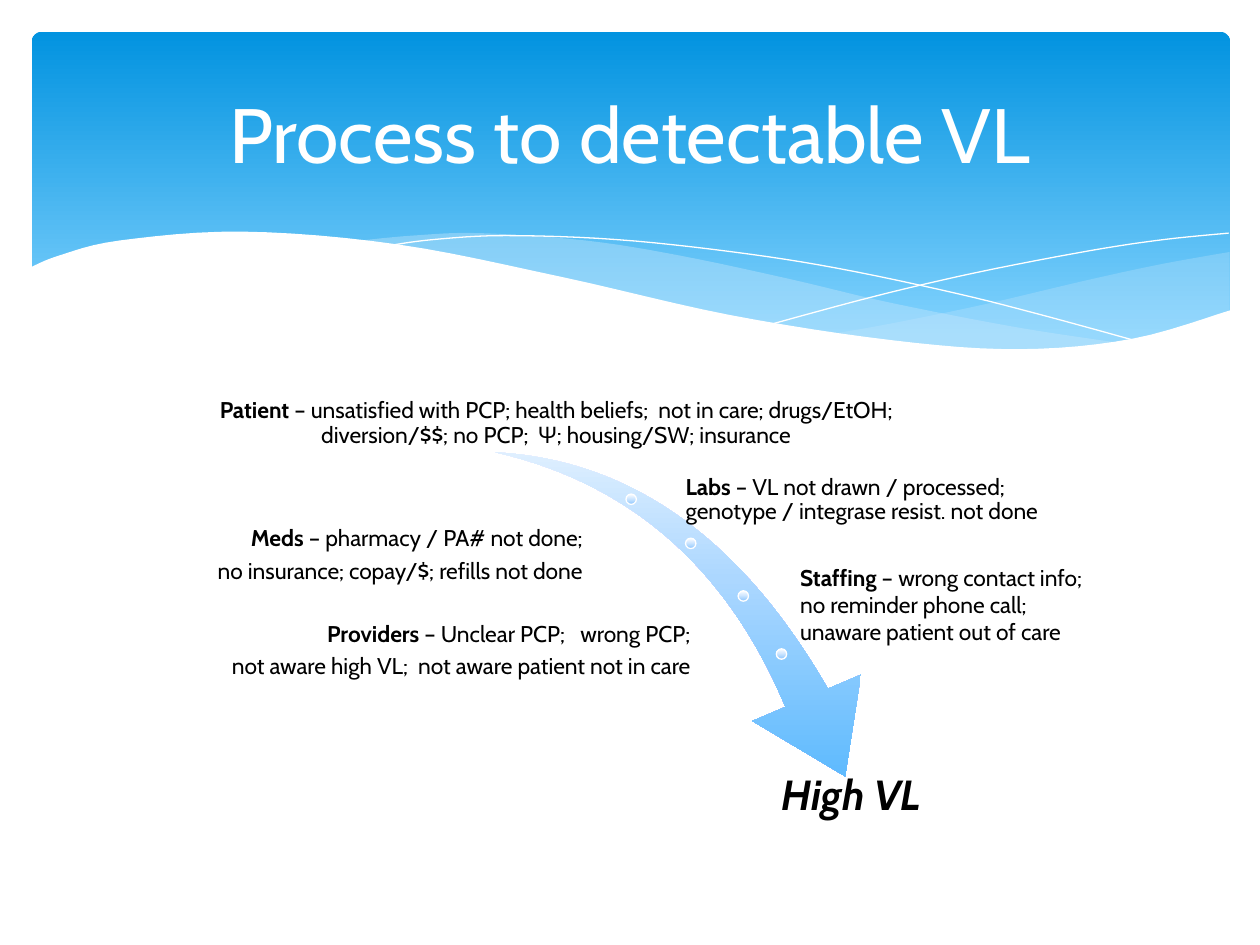
from dataclasses import dataclass
from itertools import chain
from typing import Any, Optional

from lxml.etree import SubElement
from pptx import Presentation
from pptx.dml.color import RGBColor
from pptx.enum.shapes import MSO_SHAPE as Preset
from pptx.enum.text import MSO_ANCHOR as Anchor, MSO_AUTO_SIZE as AutoSize, PP_ALIGN as Align
from pptx.oxml.ns import qn
from pptx.util import Cm, Pt

WHITE = RGBColor(0xFF, 0xFF, 0xFF)
BLACK = RGBColor(0x00, 0x00, 0x00)
MIST = RGBColor(0xC6, 0xE7, 0xFC)
DEEP_BLUE = RGBColor(0x02, 0x93, 0xE0)
SKY = RGBColor(0x83, 0xD3, 0xFE)
ARROW_MID = RGBColor(0xAC, 0xD7, 0xFF)
ARROW_END = RGBColor(0x42, 0xB0, 0xFD)
DOT_MID = RGBColor(0xD2, 0xE8, 0xFF)
DOT_END = RGBColor(0x8D, 0xC6, 0xFD)

BANNER_STOPS = ((0, DEEP_BLUE), (90, SKY))
ARROW_STOPS = ((0, WHITE), (44, ARROW_MID), (100, ARROW_END))
DOT_STOPS = ((0, WHITE), (44, DOT_MID), (100, DOT_END))

Point = tuple[float, float]
Curve = tuple[Point, ...]


@dataclass(frozen=True)
class Wave:
    """A filled area whose outline runs along the given curves, in cm."""
    edges: tuple[Curve, ...]
    color: RGBColor
    opacity: int = 100


@dataclass(frozen=True)
class Line:
    text: str
    lead: str = ""
    right_indent: float = 0


@dataclass(frozen=True)
class Label:
    box: tuple[float, float, float, float]
    lines: tuple[Line, ...]
    align: Align = Align.LEFT
    anchor: Anchor = Anchor.MIDDLE
    size: int = 13
    color: RGBColor = BLACK
    italic: bool = False
    inset: tuple[float, float] = (0.05, 0.05)
    spacing: float = 0.9
    after: float = 4.6
    auto_size: AutoSize = AutoSize.NONE


WAVES = (
    Wave((((24.79, 5.08), (23.39, 5.33), (21.87, 5.66), (19.79, 6.15), (17.93, 6.53), (16.79, 6.73)),
          ((16.79, 6.73), (18.26, 6.91), (19.84, 7.04), (21.21, 7.04), (22.58, 6.91),
           (23.75, 6.65), (24.79, 6.27))), MIST, 29),
    Wave((((22.68, 6.93), (20.5, 6.6), (17.93, 6.1), (15.98, 5.64), (13.74, 5.16),
           (11.81, 4.85), (9.65, 4.7), (8.33, 4.75), (7.26, 4.85)),
          ((7.26, 4.85), (9.19, 5.16), (11.4, 5.64), (14.38, 6.3), (16.89, 6.76),
           (19, 7.01), (21.03, 7.06), (22.68, 6.93))), MIST, 40),
)
STRANDS: tuple[Curve, ...] = (
    ((7.85, 4.95), (8.74, 4.83), (10.19, 4.75), (12.42, 4.83), (14.78, 5.08),
     (16.89, 5.41), (19.3, 5.92), (21.11, 6.38), (23.04, 6.91)),
    ((15.57, 6.53), (17.65, 5.97), (19.71, 5.49), (22, 5.05), (23.47, 4.83), (24.77, 4.7)),
)
FRONT_WAVE = Wave(
    (((24.82, 6.25), (22.83, 6.83), (20.55, 7.04), (17.98, 6.86), (14.71, 6.35), (11.35, 5.59),
      (8.03, 4.93), (4.9, 4.67), (2.41, 4.85), (1.17, 5.16), (0.58, 5.41)),
     ((0.58, 8.36), (24.82, 8.36))), WHITE)

DOT_SIZE = 0.21
DOTS: Curve = ((12.62, 9.96), (13.82, 10.85), (14.88, 11.91), (15.65, 13.08))

LABELS = (
    Label((3.89, 7.39, 14.63, 1.7),
          (Line(" – unsatisfied with PCP; health beliefs;  not in care; drugs/EtOH; "
                "diversion/$$; no PCP;  Ψ; housing/SW; insurance", "Patient"),),
          Align.CENTER, Anchor.BOTTOM),
    Label((13.77, 9.32, 9.25, 1.52),
          (Line(" – VL not drawn / processed;\vgenotype / integrase resist. not done", "Labs"),)),
    Label((2.54, 10.44, 9.55, 1.52),
          (Line(" – pharmacy / PA# not done;", "Meds", 0.3),
           Line("no insurance; copay/$; refills not done")), Align.RIGHT),
    Label((4.45, 12.37, 9.6, 1.52),
          (Line(" – Unclear PCP;   wrong PCP;", "Providers", 0.09),
           Line("not aware high VL;  not aware patient not in care", "", 0.09)), Align.RIGHT),
    Label((14.53, 15.52, 5.28, 1.52), (Line("", "High VL"),),
          Align.CENTER, Anchor.TOP, 24, italic=True, inset=(0.08, 0.08)),
    Label((1.27, 0.94, 22.86, 3.48), (Line("Process to detectable VL"),),
          Align.CENTER, size=44, color=WHITE, inset=(0.25, 0.13), spacing=1, after=0),
    Label((15.88, 11.23, 7.82, 1.93),
          (Line(" – wrong contact info;", "Staffing"), Line("no reminder phone call;"),
           Line("unaware patient out of care")),
          anchor=Anchor.TOP, inset=(0.25, 0.13), spacing=1, after=0,
          auto_size=AutoSize.SHAPE_TO_FIT_TEXT),
)


def apply_format(target: Any, values: dict[str, Any]) -> None:
    for name, value in values.items():
        setattr(target, name, value)


def smooth(curve: Curve, steps: int = 6) -> list[Point]:
    """Sample a Catmull-Rom spline through the points of the curve."""
    padded = (curve[0], *curve, curve[-1])
    samples = [curve[0]]
    for a, b, c, d in zip(padded, padded[1:], padded[2:], padded[3:]):
        for step in range(1, steps + 1):
            t = step / steps
            x, y = (0.5 * (2 * q + (r - p) * t + (2 * p - 5 * q + 4 * r - s) * t ** 2
                           + (3 * q - p - 3 * r + s) * t ** 3)
                    for p, q, r, s in zip(a, b, c, d))
            samples.append((x, y))
    return samples


def fill_gradient(shape: Any, stops: tuple[tuple[int, RGBColor], ...]) -> None:
    """Fill from top to bottom, whatever the rotation of the shape."""
    shape.fill.gradient()
    gradient = shape._element.spPr.find(qn("a:gradFill"))
    gradient.set("rotWithShape", "0")
    stop_list = gradient.find(qn("a:gsLst"))
    for old_stop in list(stop_list):
        stop_list.remove(old_stop)
    for position, color in stops:
        stop = SubElement(stop_list, qn("a:gs"), pos=str(position * 1000))
        SubElement(stop, qn("a:srgbClr"), val=str(color))
    gradient.find(qn("a:lin")).set("ang", "5400000")


def add_preset(shapes: Any, preset: Preset, box: tuple[float, ...], stops: tuple) -> Any:
    shape = shapes.add_shape(preset, *map(Cm, box))
    shape.shadow.inherit = False
    fill_gradient(shape, stops)
    shape.line.fill.background()
    return shape


def add_outline(shapes: Any, points: list[Point], close: bool) -> Any:
    start, *others = [(Cm(x), Cm(y)) for x, y in points]
    builder = shapes.build_freeform(*start)
    builder.add_line_segments(others, close=close)
    shape = builder.convert_to_shape()
    shape.shadow.inherit = False
    return shape


def add_wave(shapes: Any, wave: Wave) -> None:
    shape = add_outline(shapes, list(chain.from_iterable(map(smooth, wave.edges))), True)
    shape.fill.solid()
    shape.fill.fore_color.rgb = wave.color
    shape.line.fill.background()
    if wave.opacity < 100:
        color = shape._element.spPr.find(qn("a:solidFill"))[0]
        SubElement(color, qn("a:alpha"), val=str(wave.opacity * 1000))


def add_strand(shapes: Any, curve: Curve) -> None:
    shape = add_outline(shapes, smooth(curve), False)
    shape.fill.background()
    shape.line.color.rgb = WHITE
    shape.line.width = Pt(0)


def add_label(shapes: Any, label: Label) -> None:
    frame = shapes.add_textbox(*map(Cm, label.box)).text_frame
    side, end = map(Cm, label.inset)
    apply_format(frame, {"word_wrap": True, "auto_size": label.auto_size,
                         "vertical_anchor": label.anchor, "margin_left": side,
                         "margin_right": side, "margin_top": end, "margin_bottom": end})
    for index, line in enumerate(label.lines):
        paragraph = frame.add_paragraph() if index else frame.paragraphs[0]
        apply_format(paragraph, {"alignment": label.align, "line_spacing": label.spacing,
                                 "space_after": Pt(label.after)})
        if line.right_indent:
            paragraph._p.get_or_add_pPr().set("marR", str(Cm(line.right_indent)))
        for text, bold in ((line.lead, True), (line.text, False)):
            for part_index, part in enumerate(text.split("\v") if text else ()):
                if part_index:
                    paragraph.add_line_break()
                run = paragraph.add_run()
                run.text = part
                apply_format(run.font, {"name": "Cabin", "size": Pt(label.size),
                                        "bold": bold, "italic": label.italic})
                run.font.color.rgb = label.color


def main() -> None:
    deck = Presentation()
    apply_format(deck, {"slide_width": Cm(25.4), "slide_height": Cm(19.05)})
    shapes = deck.slides.add_slide(deck.slide_layouts[6]).shapes

    banner = add_preset(shapes, Preset.ROUNDED_RECTANGLE, (0.64, 0.64, 24.16, 6.86), BANNER_STOPS)
    banner.adjustments[0] = 0.03
    for wave in WAVES:
        add_wave(shapes, wave)
    for strand in STRANDS:
        add_strand(shapes, strand)
    add_wave(shapes, FRONT_WAVE)

    arrow = add_preset(shapes, Preset.SWOOSH_ARROW, (9.8, 9.37, 8.28, 5.77), ARROW_STOPS)
    arrow.rotation = 73.3
    arrow.adjustments[0], arrow.adjustments[1] = 0.16, 0.31
    for left, top in DOTS:
        dot = add_preset(shapes, Preset.OVAL, (left, top, DOT_SIZE, DOT_SIZE), DOT_STOPS)
        dot.line.color.rgb = WHITE
        dot.line.width = Pt(0.75)
    for label in LABELS:
        add_label(shapes, label)

    deck.save("out.pptx")


if __name__ == "__main__":
    main()
